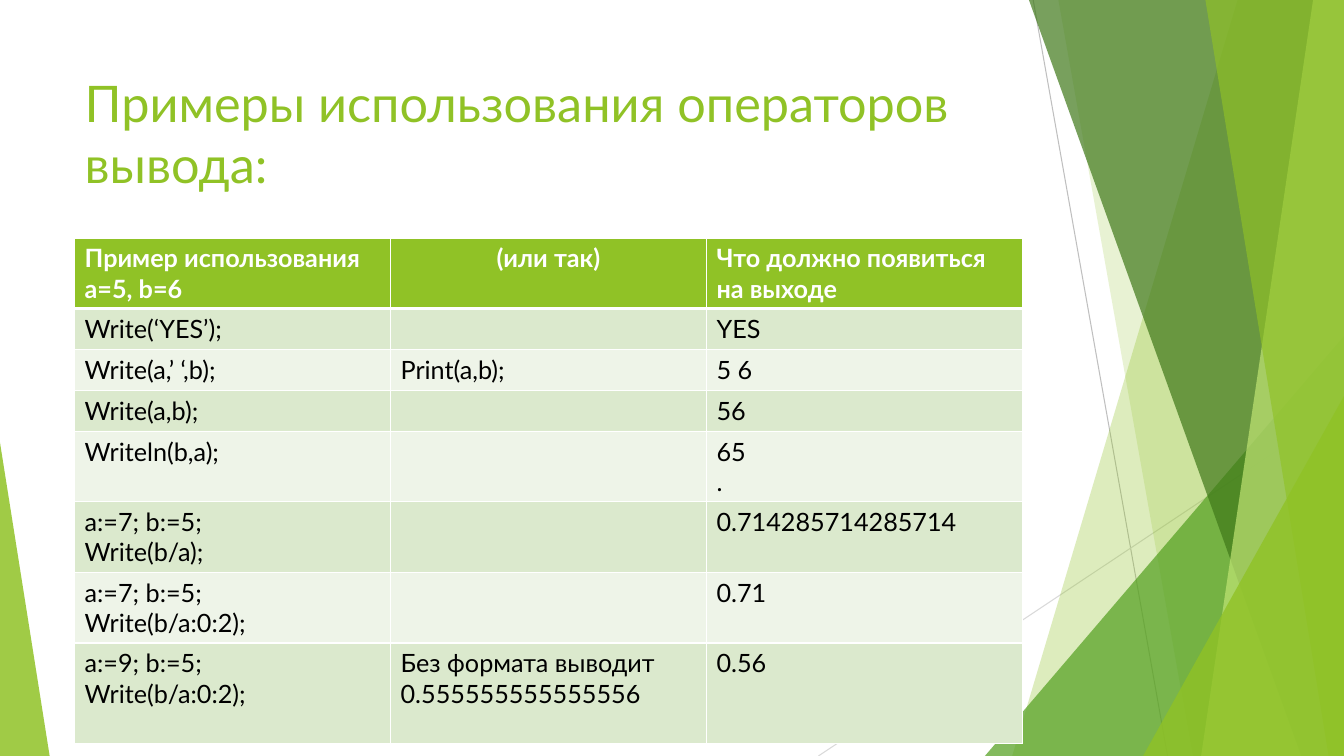
import pptx
import pptx.util
import pptx.dml.color
import pptx.enum.shapes
import pptx.enum.text
import pptx.oxml
import pptx.oxml.ns
import lxml.etree

Pt = pptx.util.Pt
qn = pptx.oxml.ns.qn
SubElement = lxml.etree.SubElement
ALIGN = pptx.enum.text.PP_ALIGN
GREEN = "90C226"


def rgb(value):
    return pptx.dml.color.RGBColor.from_string(value)


def paint(shape, color, opacity):
    shape.shadow.inherit = False
    shape.line.fill.background()
    shape.fill.solid()
    shape.fill.fore_color.rgb = rgb(color)
    tint = shape.fill._xPr.find(".//" + qn("a:srgbClr"))
    SubElement(tint, qn("a:alpha"), val=str(opacity * 1000))


prs = pptx.Presentation()
prs.slide_width, prs.slide_height = Pt(960), Pt(540)
slide = prs.slides.add_slide(prs.slide_layouts[5])
shapes = slide.shapes

# Thin lines behind the facets
for x1, y1, x2, y2, color in [(738, 0, 834, 540, "BFBFBF"),
                              (960, 290, 584.6, 540, "D9D9D9")]:
    ray = shapes.add_connector(pptx.enum.shapes.MSO_CONNECTOR.STRAIGHT,
                               Pt(x1), Pt(y1), Pt(x2), Pt(y2))
    ray.line.color.rgb = rgb(color)
    ray.line.width = Pt(0.75)
    SubElement(ray._element.spPr, qn("a:effectLst"))

# Facets: bands run from a slanted left edge to the slide's right edge
bands = [  # top x, bottom x, colour, opacity
    (884, 723, GREEN, 30),
    (756, 852, GREEN, 20),
    (735, 929.5, "3F7819", 70),
    (938, 858, "C0E474", 70),
    (861, 949, GREEN, 65),
]
triangles = [  # left, top, width, apex position, colour, opacity
    (703.5, 240, 256.5, 1, "54A021", 72),
    (816.5, 283, 143.5, 1, GREEN, 80),
    (0, 316, 35.5, 0, GREEN, 85),
]
# Back to front: two bands, a triangle, three bands, two triangles
for facet in bands[:2] + triangles[:1] + bands[2:] + triangles[1:]:
    *outline, color, opacity = facet
    if len(outline) == 2:
        top_x, bottom_x = outline
        builder = shapes.build_freeform(Pt(top_x), 0)
        builder.add_line_segments([(Pt(960), 0), (Pt(960), Pt(540)), (Pt(bottom_x), Pt(540))])
        piece = builder.convert_to_shape()
    else:
        left, top, width, apex = outline
        piece = shapes.add_shape(pptx.enum.shapes.MSO_SHAPE.ISOSCELES_TRIANGLE,
                                 Pt(left), Pt(top), Pt(width), Pt(540 - top))
        piece.adjustments[0] = apex
    paint(piece, color, opacity)

# Title, brought in front of the facets
title = shapes.title
shapes._spTree.append(title._element)
title.left, title.top, title.width, title.height = Pt(53.3), Pt(48), Pt(677), Pt(104)
title.text_frame.text = "Примеры использования операторов вывода:"
title.text_frame.word_wrap = True
title.text_frame.vertical_anchor = pptx.enum.text.MSO_ANCHOR.TOP
heading = title.text_frame.paragraphs[0]
heading.alignment = ALIGN.LEFT
heading.runs[0].font.name = "Lato"
heading.runs[0].font.size = Pt(36)
heading.runs[0].font.color.rgb = rgb(GREEN)

# Table of output examples
examples = [  # row height, call, alternative, output
    (50.4, "Пример использования\na=5, b=6", "(или так)", "Что должно появиться на выходе"),
    (29.2, "Write(‘YES’);", "", "YES"),
    (29.2, "Write(a,’ ‘,b);", "Print(a,b);", "5 6"),
    (29.2, "Write(a,b);", "", "56"),
    (50.4, "Writeln(b,a);", "", "65\n."),
    (50.4, "a:=7; b:=5;\nWrite(b/a);", "", "0.714285714285714"),
    (50.4, "a:=7; b:=5;\nWrite(b/a:0:2);", "", "0.71"),
    (72, "a:=9; b:=5;\nWrite(b/a:0:2);", "Без формата выводит\n0.555555555555556", "0.56"),
]
table = shapes.add_table(len(examples), 3, Pt(53.3), Pt(170), Pt(677),
                         Pt(sum(row[0] for row in examples))).table
for column in table.columns:
    column.width = Pt(225.67)

for r, (height, *texts) in enumerate(examples):
    table.rows[r].height = Pt(height)
    is_header = r == 0
    for c, text in enumerate(texts):
        cell = table.cell(r, c)
        # White borders, heavier under the header
        for side in "LRTB":
            heavy = (is_header and side == "B") or (r == 1 and side == "T")
            border = SubElement(cell._tc.get_or_add_tcPr(), qn("a:ln" + side),
                                w=str(Pt(3 if heavy else 1)))
            SubElement(SubElement(border, qn("a:solidFill")), qn("a:srgbClr"), val="FFFFFF")
        cell.fill.solid()
        cell.fill.fore_color.rgb = rgb(GREEN if is_header else ("EEF4E8", "DBE9CD")[r % 2])
        cell.text_frame.text = text
        for paragraph in cell.text_frame.paragraphs:
            paragraph.alignment = ALIGN.CENTER if is_header and c == 1 else ALIGN.LEFT
            for run in paragraph.runs:
                run.font.name = "Lato"
                run.font.size = Pt(18)
                run.font.bold = is_header
                run.font.color.rgb = rgb("FFFFFF" if is_header else "000000")

prs.save("out.pptx")
